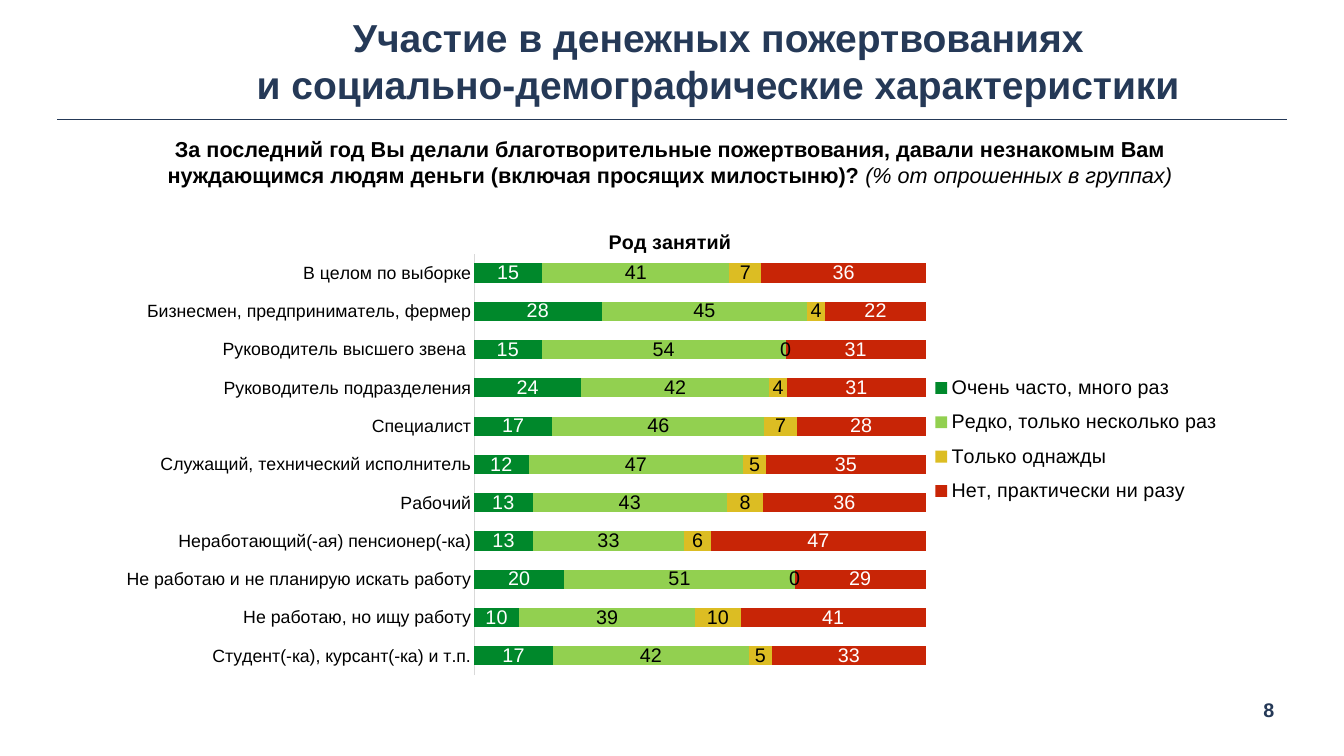
from lxml.etree import SubElement
from pptx import Presentation
from pptx.chart.data import CategoryChartData
from pptx.dml.color import RGBColor
from pptx.enum.chart import XL_CHART_TYPE, XL_LABEL_POSITION, XL_LEGEND_POSITION, XL_TICK_MARK
from pptx.enum.shapes import MSO_CONNECTOR
from pptx.enum.text import MSO_ANCHOR, PP_ALIGN
from pptx.oxml import parse_xml
from pptx.oxml.ns import nsdecls, qn
from pptx.util import Emu, Pt

PX = 9144  # 100 px to the inch
NAVY, BLACK, WHITE, GREY = "253957", "000000", "FFFFFF", "D9D9D9"

OCCUPATIONS = [
    "В целом по выборке",
    "Бизнесмен, предприниматель, фермер",
    "Руководитель высшего звена ",
    "Руководитель подразделения",
    "Специалист",
    "Служащий, технический исполнитель",
    "Рабочий",
    "Неработающий(-ая) пенсионер(-ка)",
    "Не работаю и не планирую искать работу",
    "Не работаю, но ищу работу",
    "Студент(-ка), курсант(-ка) и т.п.",
]
# Answer, bar colour, label colour, percentages by occupation
ANSWERS = [
    ("Очень часто, много раз", "00882B", WHITE, [15, 28, 15, 24, 17, 12, 13, 13, 20, 10, 17]),
    ("Редко, только несколько раз", "92D050", BLACK, [41, 45, 54, 42, 46, 47, 43, 33, 51, 39, 42]),
    ("Только однажды", "DCBD23", BLACK, [7, 4, 0, 4, 7, 5, 8, 6, 0, 10, 5]),
    ("Нет, практически ни разу", "C82506", WHITE, [36, 22, 31, 31, 28, 35, 36, 47, 29, 41, 33]),
]


def px(*lengths):
    return [Emu(length * PX) for length in lengths]


def colour(code):
    return RGBColor.from_string(code)


def manual_layout(x, y, width, height, inner=False):
    """Layout element with chart fractions."""
    target = '<c:layoutTarget val="inner"/>' if inner else ""
    return parse_xml(
        f'<c:layout {nsdecls("c")}><c:manualLayout>{target}'
        '<c:xMode val="edge"/><c:yMode val="edge"/>'
        f'<c:x val="{x}"/><c:y val="{y}"/><c:w val="{width}"/><c:h val="{height}"/>'
        '</c:manualLayout></c:layout>')


class SlideBuilder:
    font_name = "Arial"

    def __init__(self, page):
        self.page = page

    def style(self, font, size, code, bold=False, italic=False):
        font.name, font.size = self.font_name, Pt(size)
        font.bold, font.italic = bold, italic
        font.color.rgb = colour(code)

    def line(self, x1, y1, x2, y2, code, width):
        rule = self.page.shapes.add_connector(MSO_CONNECTOR.STRAIGHT, *px(x1, y1, x2, y2))
        rule.line.color.rgb = colour(code)
        rule.line.width = Pt(width)
        SubElement(rule._element.spPr, qn("a:effectLst"))

    def text(self, area, lines, size, code, anchor=MSO_ANCHOR.TOP, wrap=True):
        """Centred paragraph; each line is a list of (text, bold, italic)."""
        frame = self.page.shapes.add_textbox(*px(*area)).text_frame
        frame.word_wrap, frame.vertical_anchor = wrap, anchor
        frame.margin_left, frame.margin_top, frame.margin_right, frame.margin_bottom = px(9, 9, 9, 9)
        para = frame.paragraphs[0]
        para.alignment = PP_ALIGN.CENTER
        for number, spans in enumerate(lines):
            if number:
                para.add_line_break()
            for words, bold, italic in spans:
                span = para.add_run()
                span.text = words
                self.style(span.font, size, code, bold, italic)

    def stacked_bars(self, area, title, categories, answers):
        data = CategoryChartData(number_format="0")
        data.categories = categories
        for name, _, _, values in answers:
            data.add_series(name, values)
        chart = self.page.shapes.add_chart(
            XL_CHART_TYPE.BAR_STACKED_100, *px(*area), data).chart
        self.style(chart.font, 20, BLACK)

        # Title
        chart.has_title = True
        span = chart.chart_title.text_frame.paragraphs[0].add_run()
        span.text = title
        self.style(span.font, 20, BLACK, bold=True)

        # Axes
        names = chart.category_axis
        names.reverse_order = True
        names.major_tick_mark = names.minor_tick_mark = XL_TICK_MARK.NONE
        names.format.line.color.rgb = colour(GREY)
        names.format.line.width = Pt(0.75)
        self.style(names.tick_labels.font, 18, BLACK)
        chart.value_axis.has_major_gridlines = False
        chart.value_axis.visible = False

        # Bars and their labels
        plot = chart.plots[0]
        plot.vary_by_categories = False
        plot.gap_width, plot.overlap = 100, 100
        for series, (_, fill, label_colour, _) in zip(plot.series, answers):
            series.format.fill.solid()
            series.format.fill.fore_color.rgb = colour(fill)
            labels = series.data_labels
            labels.show_value = True
            labels.number_format, labels.number_format_is_linked = "0", False
            labels.position = XL_LABEL_POSITION.CENTER
            self.style(labels.font, 20, label_colour)

        # Legend
        chart.has_legend = True
        chart.legend.position = XL_LEGEND_POSITION.RIGHT
        chart.legend.include_in_layout = False
        self.style(chart.legend.font, 20, BLACK)

        # Places of the plot and the legend
        plot_area = chart._chartSpace.chart.plotArea
        for layout in plot_area.findall(qn("c:layout")):
            plot_area.remove(layout)
        plot_area.insert(0, manual_layout(0.324, 0.087, 0.406, 0.886, inner=True))
        legend = chart.legend._element
        for layout in legend.findall(qn("c:layout")):
            legend.remove(layout)
        legend.find(qn("c:legendPos")).addnext(manual_layout(0.73, 0.32, 0.27, 0.315))


def main():
    deck = Presentation()
    deck.slide_width, deck.slide_height = px(1896, 1067)
    slide = SlideBuilder(deck.slides.add_slide(deck.slide_layouts[6]))

    # Header rule and page number
    slide.line(81, 169, 1816, 169, NAVY, 1)
    slide.text((1764, 976, 52, 52), [[("8", True, False)]], 20, NAVY, wrap=False)

    # Title
    slide.text((215, 32, 1597, 106), [
        [("Участие в денежных пожертвованиях", True, False)],
        [("и социально-демографические характеристики", True, False)],
    ], 39.6, NAVY, MSO_ANCHOR.MIDDLE)

    # Survey question
    slide.text((160, 183, 1570, 58), [[
        ("За последний год Вы делали благотворительные пожертвования, давали незнакомым Вам "
         "нуждающимся людям деньги (включая просящих милостыню)? ", True, False),
        ("(% от опрошенных в группах)", False, True),
    ]], 22, BLACK)

    # Answers by occupation
    slide.stacked_bars((160, 300, 1570, 671), "Род занятий", OCCUPATIONS, ANSWERS)

    deck.save("out.pptx")


if __name__ == "__main__":
    main()
